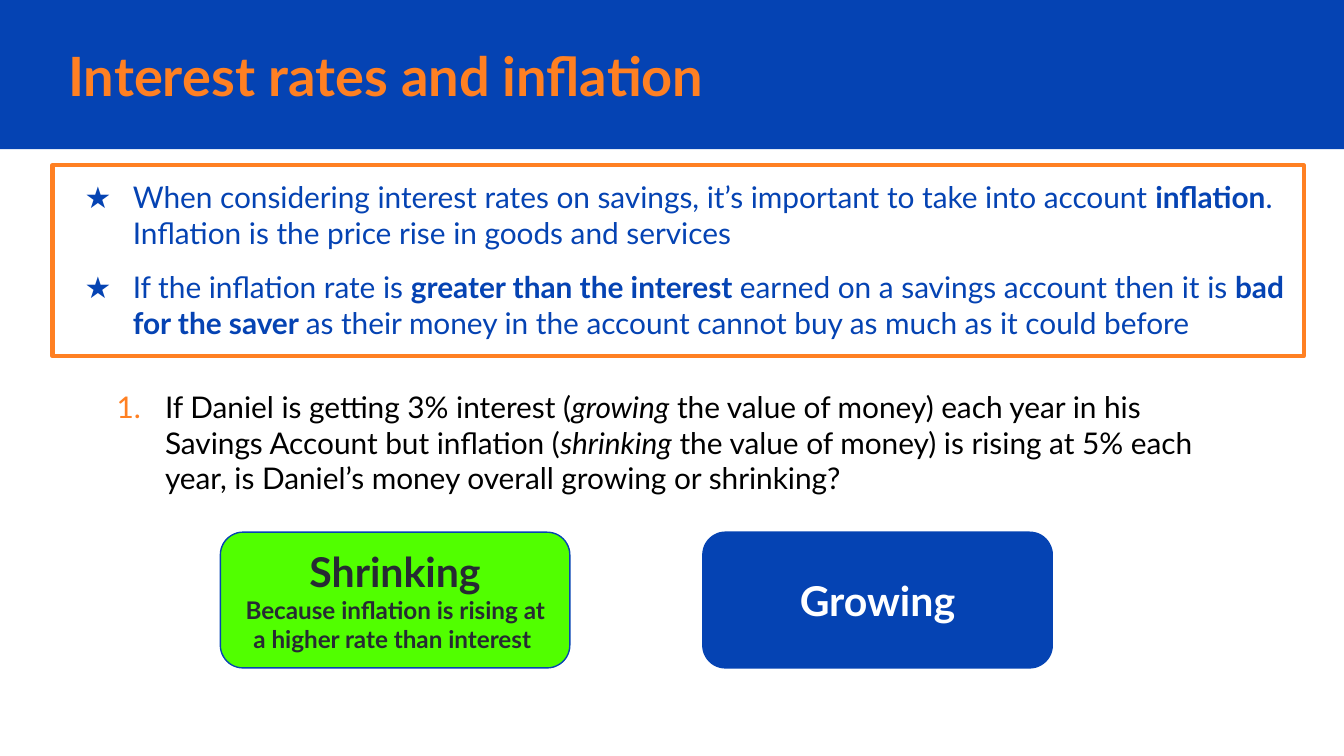
from lxml import etree
from pptx import Presentation
from pptx.dml.color import RGBColor
from pptx.enum.shapes import MSO_SHAPE
from pptx.enum.text import MSO_ANCHOR, PP_ALIGN
from pptx.oxml.ns import qn
from pptx.util import Inches, Pt

RECT, ROUNDED = MSO_SHAPE.RECTANGLE, MSO_SHAPE.ROUNDED_RECTANGLE
TOP, MIDDLE = MSO_ANCHOR.TOP, MSO_ANCHOR.MIDDLE
LEFT, CENTER = PP_ALIGN.LEFT, PP_ALIGN.CENTER

FONT = "Lato"
COLORS = {
    "blue": "0543B3",
    "orange": "FF8022",
    "green": "51FF00",
    "dark": "262A33",
    "black": "000000",
    "white": "FFFFFF",
}

KEY_POINTS = [
    [("When considering interest rates on savings, it’s important to take into account", {}),
     (" inflation", {"bold": True}),
     (". Inflation is the price rise in goods and services", {})],
    [("If the inflation rate is ", {}),
     ("greater than the interest ", {"bold": True}),
     ("earned on a savings account then it is", {}),
     (" bad for the saver ", {"bold": True}),
     ("as their money in the account cannot buy as much as it could before", {})],
]
QUESTION = [
    ("If Daniel is getting 3% interest (", {}),
    ("growing", {"italic": True}),
    (" the value of money) each year in his Savings Account but inflation (", {}),
    ("shrinking", {"italic": True}),
    (" the value of money) is rising at 5% each year, "
     "is Daniel’s money overall growing or shrinking?", {}),
]
# fill, text colour, lines of (text, size)
ANSWERS = [
    ("green", "dark", [("Shrinking", 22),
                       ("Because inflation is rising at a higher rate than interest ", 13)]),
    ("blue", "white", [("Growing", 22)]),
]


def rgb(name):
    return RGBColor.from_string(COLORS[name])


def add_box(slide, kind, box, fill=None, line=None, width=0.75):
    sp = slide.shapes.add_shape(kind, *map(Inches, box))
    sp.shadow.inherit = False
    if fill:
        sp.fill.solid()
        sp.fill.fore_color.rgb = rgb(fill)
    else:
        sp.fill.background()
    if line:
        sp.line.color.rgb = rgb(line)
        sp.line.width = Pt(width)
    else:
        sp.line.fill.background()
    return sp


def add_textbox(slide, box):
    return slide.shapes.add_textbox(*map(Inches, box))


def set_bullet(p, tag, color, **attrs):
    """Give the paragraph a hanging, coloured bullet or number."""
    pPr = p._p.get_or_add_pPr()
    pPr.set("marL", str(Inches(0.5)))
    pPr.set("indent", str(Inches(-0.36)))
    clr = etree.SubElement(pPr, qn("a:buClr"))
    etree.SubElement(clr, qn("a:srgbClr"), val=COLORS[color])
    etree.SubElement(pPr, qn("a:buFont"), typeface=FONT)
    etree.SubElement(pPr, qn(tag), **attrs)


def set_frame(sp, anchor):
    tf = sp.text_frame
    frame = {"word_wrap": True, "vertical_anchor": anchor}
    frame.update({f"margin_{side}": Inches(0.1) for side in ("left", "top", "right", "bottom")})
    for name, value in frame.items():
        setattr(tf, name, value)
    return tf


def add_paragraph(tf, first, runs, size, color, align=LEFT, bullet=None):
    p = tf.paragraphs[0] if first else tf.add_paragraph()
    p.alignment = align
    if bullet:
        set_bullet(p, **bullet)
    for text, style in runs:
        r = p.add_run()
        r.text = text
        font = {"name": FONT, "size": Pt(size), "bold": False, "italic": False, **style}
        for name, value in font.items():
            setattr(r.font, name, value)
        r.font.color.rgb = rgb(color)
    return p


def add_title(slide):
    add_box(slide, RECT, (0, 0, 10, 1.11), fill="blue")
    tf = set_frame(add_textbox(slide, (0.41, 0.28, 8.46, 0.56)), MIDDLE)
    add_paragraph(tf, True, [("Interest rates and inflation", {"bold": True})], 29, "orange")


def add_key_points(slide):
    sp = add_box(slide, RECT, (0.39, 1.23, 9.31, 1.42), line="orange", width=2.25)
    tf = set_frame(sp, TOP)
    star = {"tag": "a:buChar", "color": "blue", "char": "★"}
    for i, runs in enumerate(KEY_POINTS):
        p = add_paragraph(tf, i == 0, runs, 16, "blue", bullet=star)
        if i:
            p.space_before = Pt(10)


def add_question(slide):
    tf = set_frame(add_textbox(slide, (0.63, 2.79, 8.46, 1.52)), TOP)
    number = {"tag": "a:buAutoNum", "color": "orange", "type": "arabicPeriod"}
    add_paragraph(tf, True, QUESTION, 16, "black", bullet=number)


def add_answers(slide):
    for i, (fill, color, lines) in enumerate(ANSWERS):
        sp = add_box(slide, ROUNDED, (1.64 + 3.59 * i, 3.96, 2.6, 1.01), fill, "blue")
        tf = set_frame(sp, MIDDLE)
        for j, (text, size) in enumerate(lines):
            add_paragraph(tf, j == 0, [(text, {"bold": True})], size, color, CENTER)


def main():
    prs = Presentation()
    prs.slide_width = Inches(10)
    prs.slide_height = Inches(10 * 9 / 16)
    slide = prs.slides.add_slide(prs.slide_layouts[6])
    add_title(slide)
    add_question(slide)
    add_answers(slide)
    add_key_points(slide)
    prs.save("out.pptx")


if __name__ == "__main__":
    main()
